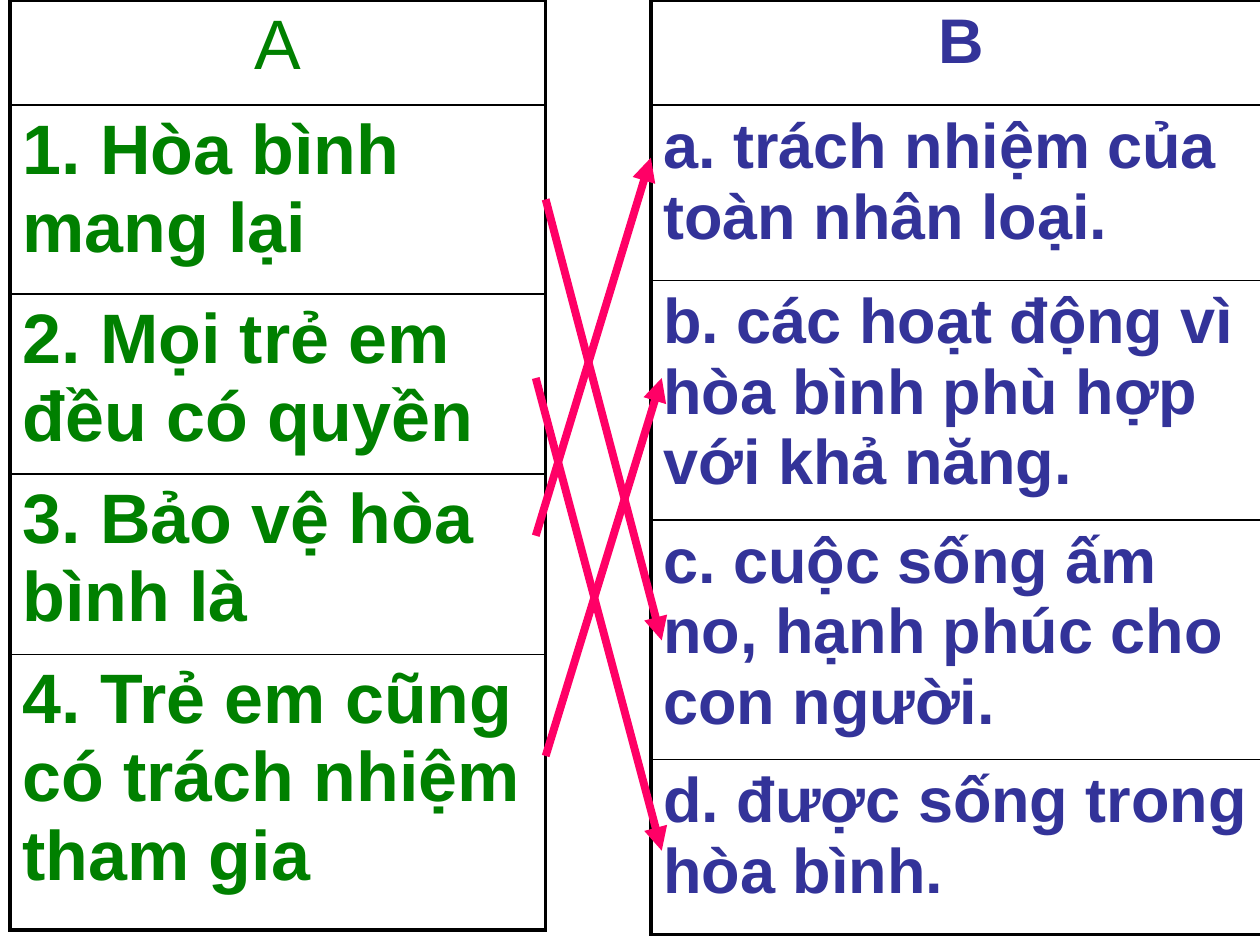
from lxml.etree import SubElement
from pptx import Presentation
from pptx.dml.color import RGBColor as RGB
from pptx.enum.shapes import MSO_CONNECTOR as Conn
from pptx.enum.text import PP_ALIGN as Align
from pptx.oxml import parse_xml
from pptx.oxml.ns import nsdecls, qn
from pptx.util import Cm, Pt

THEME = {
    "font": "Arial", "left": "008000", "right": "333399", "arrow": "FF0066",
    "border": "000000", "size_left": 40, "size_right": 36,
    "outer": 2.25, "inner": 1, "arrow_width": 4.5,
}

# Content: two columns to match, lengths in cm
COLUMNS = [
    {"x": 0.2, "width": 10.8, "color": THEME["left"], "size": THEME["size_left"],
     "bold_header": False,
     "rows": [("A", 2.12), ("1. Hòa bình mang lại", 3.81),
              ("2. Mọi trẻ em đều có quyền", 3.63),
              ("3. Bảo vệ hòa bình là", 3.63),
              ("4. Trẻ em cũng có trách nhiệm tham gia", 5.56)]},
    {"x": 13.12, "width": 12.5, "color": THEME["right"], "size": THEME["size_right"],
     "bold_header": True,
     "rows": [("B", 2.12), ("a. trách nhiệm của toàn nhân loại.", 3.53),
              ("b. các hoạt động vì hòa bình phù hợp với khả năng.", 4.83),
              ("c. cuộc sống ấm no, hạnh phúc cho con người.", 4.83),
              ("d. được sống trong hòa bình.", 3.53)]},
]

# Answers: start x, y and end x, y in cm
ARROWS = [
    (11, 4.02, 13.34, 12.91),    # 1 - c
    (11, 15.24, 13.34, 7.62),    # 4 - b
    (10.8, 7.62, 13.34, 17.15),  # 2 - d
    (10.8, 10.8, 13.12, 3.18),   # 3 - a
]


def set_borders(cell, first, last):
    outer, inner = THEME["outer"], THEME["inner"]
    widths = {"L": outer, "R": outer,
              "T": outer if first else inner, "B": outer if last else inner}
    tc_pr = cell._tc.get_or_add_tcPr()
    for i, (side, width) in enumerate(widths.items()):
        tc_pr.insert(i, parse_xml(
            f'<a:ln{side} {nsdecls("a")} w="{Pt(width)}"><a:solidFill>'
            f'<a:srgbClr val="{THEME["border"]}"/></a:solidFill></a:ln{side}>'))


def write_cell(cell, text, column, header):
    cell.fill.background()
    p = cell.text_frame.paragraphs[0]
    p.text = text
    p.alignment = Align.CENTER if header else Align.LEFT
    p.font.name = THEME["font"]
    p.font.size = Pt(column["size"])
    p.font.bold = column["bold_header"] or not header
    p.font.color.rgb = RGB.from_string(column["color"])
    p._p.get_or_add_pPr().insert(0, parse_xml(
        f'<a:spcBef {nsdecls("a")}><a:spcPct val="20000"/></a:spcBef>'))


def add_column(slide, column):
    rows = column["rows"]
    height = sum(h for _, h in rows)
    table = slide.shapes.add_table(len(rows), 1, Cm(column["x"]), 0,
                                   Cm(column["width"]), Cm(height)).table
    table.first_row = table.horz_banding = False
    for i, (text, row_height) in enumerate(rows):
        table.rows[i].height = Cm(row_height)
        cell = table.cell(i, 0)
        write_cell(cell, text, column, header=i == 0)
        set_borders(cell, first=i == 0, last=i == len(rows) - 1)


def add_arrow(slide, points):
    line = slide.shapes.add_connector(Conn.STRAIGHT, *map(Cm, points))
    line.line.color.rgb = RGB.from_string(THEME["arrow"])
    line.line.width = Pt(THEME["arrow_width"])
    sp_pr = line._element.spPr
    SubElement(sp_pr.find(qn("a:ln")), qn("a:tailEnd"), type="triangle")
    SubElement(sp_pr, qn("a:effectLst"))


def main():
    prs = Presentation()
    prs.slide_width, prs.slide_height = Cm(25.4), Cm(19.05)
    slide = prs.slides.add_slide(prs.slide_layouts[6])
    for column in COLUMNS:
        add_column(slide, column)
    for points in ARROWS:
        add_arrow(slide, points)
    prs.save("out.pptx")


if __name__ == "__main__":
    main()
